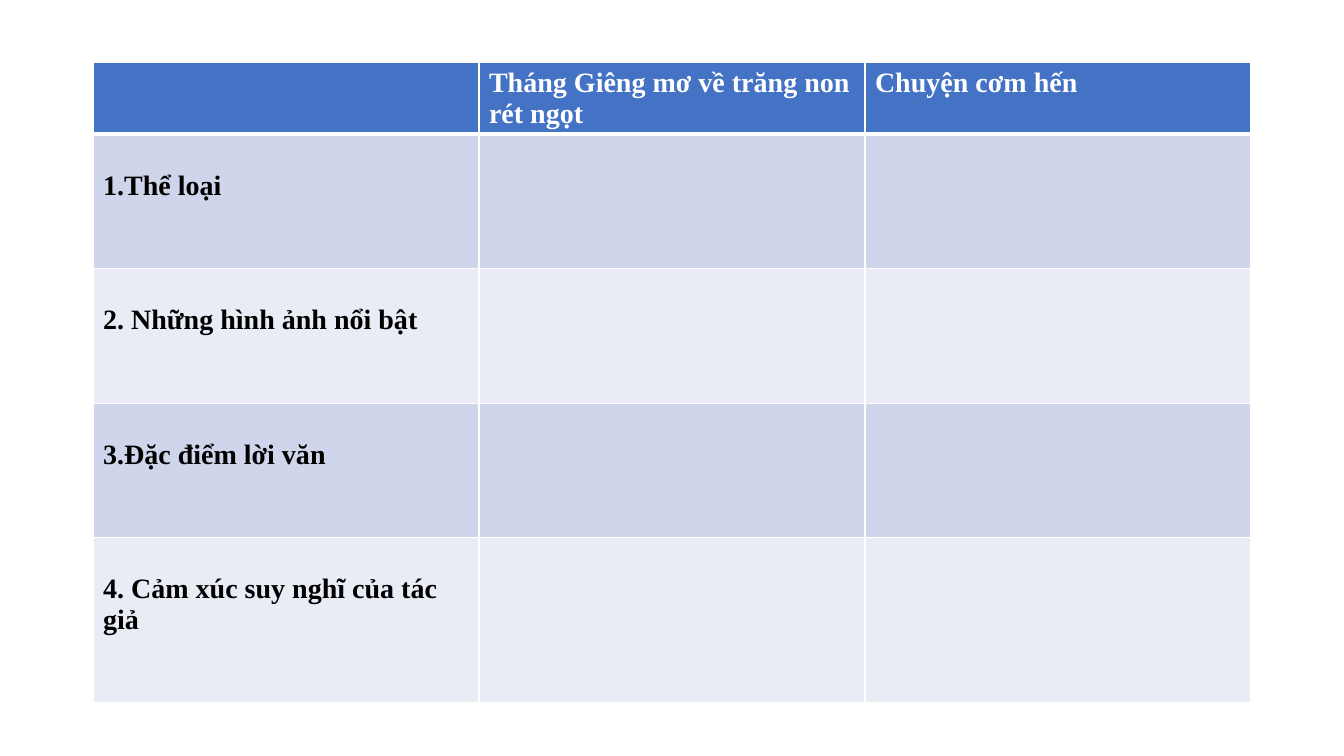
from lxml.etree import SubElement
from pptx import Presentation
from pptx.dml.color import RGBColor
from pptx.oxml.ns import qn
from pptx.util import Emu, Pt

EMU_PER_PX = 914400 / 100.8
HEADER_FILL = "4472C4"
BAND_FILLS = ["CFD5EA", "E9EBF5"]
BORDER_COLOUR = "FFFFFF"


def px(length):
    return Emu(round(length * EMU_PER_PX))


def colour(hex_value):
    return RGBColor.from_string(hex_value)


deck = Presentation()
deck.slide_width, deck.slide_height = px(1344), px(756)
page = deck.slides.add_slide(deck.slide_layouts[6])

rows = [
    ["", "Tháng Giêng mơ về trăng non rét ngọt", "Chuyện cơm hến"],
    ["1.Thể loại", "", ""],
    ["2. Những hình ảnh nổi bật", "", ""],
    ["3.Đặc điểm lời văn", "", ""],
    ["4. Cảm xúc suy nghĩ của tác giả", "", ""],
]
row_heights = [72, 134, 135, 134, 165]
column_width = 386

table = page.shapes.add_table(
    len(rows), len(rows[0]), px(93), px(62),
    px(column_width * len(rows[0])), px(sum(row_heights)),
).table
for column in table.columns:
    column.width = px(column_width)

for row_index, (texts, height) in enumerate(zip(rows, row_heights)):
    table.rows[row_index].height = px(height)
    is_header = row_index == 0
    fill = HEADER_FILL if is_header else BAND_FILLS[(row_index - 1) % 2]
    font_format = {"name": "Times New Roman", "size": Pt(20), "bold": True}
    border_widths = {
        "a:lnL": 1,
        "a:lnR": 1,
        "a:lnT": 3 if row_index == 1 else 1,
        "a:lnB": 3 if is_header else 1,
    }
    for column_index, text in enumerate(texts):
        cell = table.cell(row_index, column_index)
        properties = cell._tc.get_or_add_tcPr()
        for side, width in border_widths.items():
            line = SubElement(properties, qn(side), w=str(Pt(width)))
            line_fill = SubElement(line, qn("a:solidFill"))
            SubElement(line_fill, qn("a:srgbClr"), val=BORDER_COLOUR)
        cell.fill.solid()
        cell.fill.fore_color.rgb = colour(fill)
        if not text:
            continue
        if not is_header:
            cell.margin_top = px(36)
        span = cell.text_frame.paragraphs[0].add_run()
        span.text = text
        for attribute, value in font_format.items():
            setattr(span.font, attribute, value)
        span.font.color.rgb = colour("FFFFFF" if is_header else "000000")

deck.save("out.pptx")
